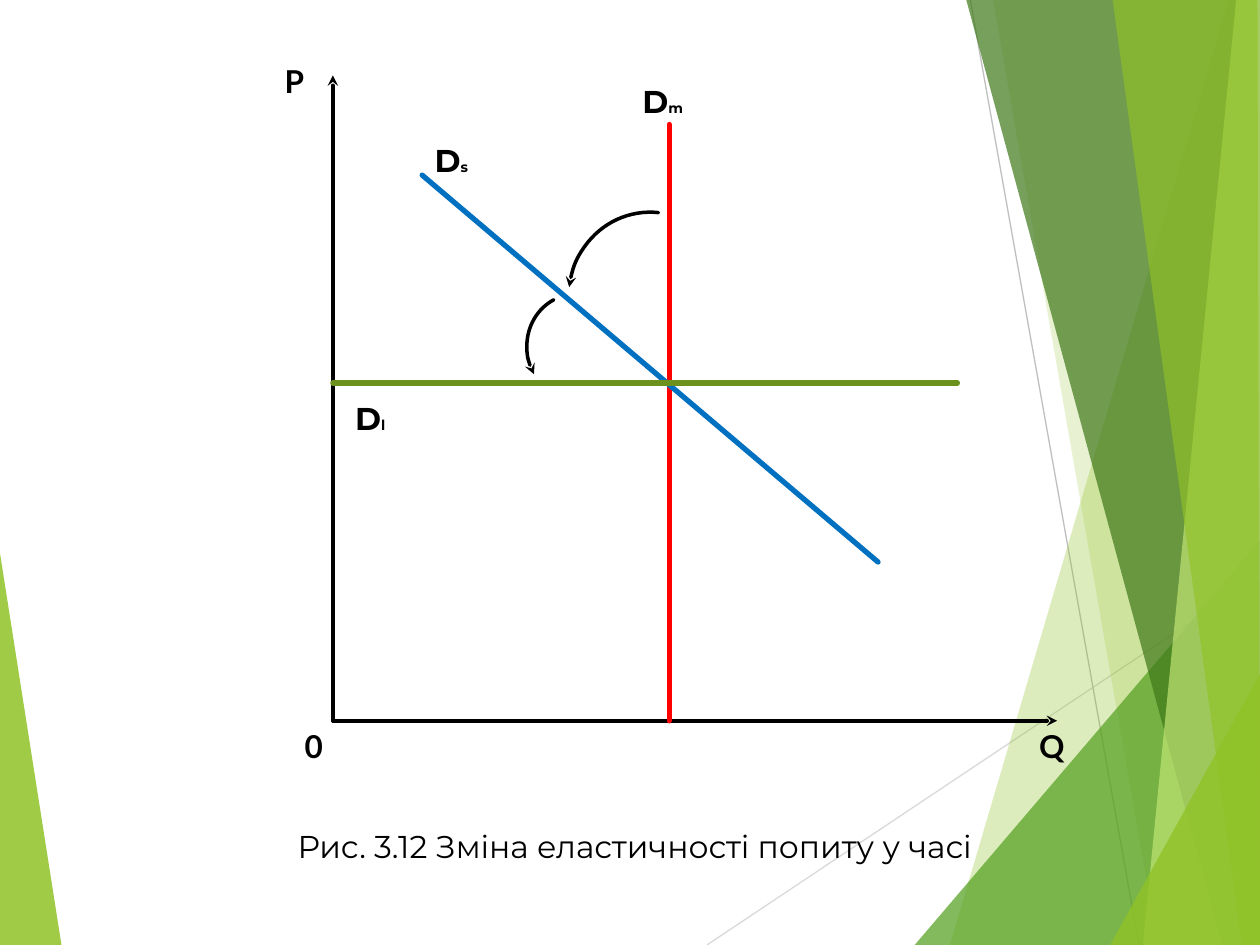
from lxml.etree import SubElement
from pptx import Presentation
from pptx.dml.color import RGBColor
from pptx.enum.shapes import MSO_CONNECTOR, MSO_SHAPE
from pptx.enum.text import PP_ALIGN
from pptx.oxml.ns import qn
from pptx.util import Cm, Pt

W, H = 25.4, 19.05  # slide size, cm
X0, Y0 = 6.71, 14.53  # origin of the graph
XM, YL = 13.49, 7.72  # the vertical and the horizontal demand line

# start, end, colour
HAIRLINES = [
    ((14.25, H), (W, 11.61), "D9D9D9"),
    ((19.56, 0), (22.96, H), "BFBFBF"),
]
# colour, opacity in %, corners
FACETS = [
    ("90C226", 85, [(0, 11.15), (1.24, H), (0, H)]),
    ("90C226", 30, [(24.77, 0), (19.15, H), (W, H), (W, 0)]),
    ("90C226", 20, [(20.02, 0), (23.34, H), (W, H), (W, 0)]),
    ("54A021", 72, [(18.44, H), (W, 10.9), (W, H)]),
    ("3F7819", 70, [(19.48, 0), (24.64, H), (W, H), (W, 0)]),
    ("C0E474", 70, [(24.92, 0), (23.04, H), (W, H), (W, 0)]),
    ("90C226", 65, [(22.43, 0), (25.04, H), (W, H), (25.35, 0)]),
    ("90C226", 80, [(22.38, H), (W, 13.59), (W, H)]),
]
# start, end
AXES = [((X0, Y0), (X0, 1.52)), ((X0, Y0), (21.31, Y0))]
# start, end, colour
CURVES = [
    ((XM, Y0), (XM, 2.51), "FF0000"),
    ((8.51, 3.53), (17.7, 11.33), "0070C0"),
    ((X0, YL), (19.3, YL), "6C921D"),
]
# left, top, width, height, rotation
TURNS = [(11.4, 4.34, 3.38, 3.25, 276.3), (10.57, 5.97, 2.26, 2.13, 241.6)]
# text, small index, font, left, top, width
LABELS = [
    ("P", "", "Lato", 5.49, 1.12, 1),
    ("Q", "", "Lato", 20.7, Y0, 1.2),
    ("0", "", "Lato", 5.89, Y0, 1),
    ("D", "m", "Montserrat", 12.7, 1.52, 1.4),
    ("D", "s", "Montserrat", 8.51, 2.72, 1.2),
    ("D", "l", "Montserrat", 6.91, 7.92, 1.4),
]
CAPTION = "Рис. 3.12 Зміна еластичності попиту у часі"


def rgb(color):
    return RGBColor.from_string(color)


def style_line(s, color, width, arrow=None, cap="rnd"):
    """Set the stroke; arrow is None, "headEnd" or "tailEnd"."""
    s.line.color.rgb = rgb(color)
    s.line.width = Pt(width)
    ln = s.line._get_or_add_ln()
    ln.set("cap", cap)
    if arrow:
        SubElement(ln, qn("a:" + arrow), type="stealth")


def add_line(shapes, start, end, color, width, arrow=None, cap="rnd"):
    s = shapes.add_connector(MSO_CONNECTOR.STRAIGHT, *map(Cm, start + end))
    style_line(s, color, width, arrow, cap)
    SubElement(s._element.spPr, qn("a:effectLst"))


def add_facet(shapes, color, opacity, corners):
    points = [(Cm(x), Cm(y)) for x, y in corners]
    builder = shapes.build_freeform(*points[0])
    builder.add_line_segments(points[1:])
    s = builder.convert_to_shape()
    s.shadow.inherit = False
    s.line.fill.background()
    s.fill.solid()
    s.fill.fore_color.rgb = rgb(color)
    fill = s._element.spPr.find(qn("a:solidFill"))
    SubElement(fill[0], qn("a:alpha"), val=str(opacity * 1000))


def add_turn(shapes, left, top, width, height, rotation):
    s = shapes.add_shape(MSO_SHAPE.ARC, *map(Cm, (left, top, width, height)))
    s.rotation = rotation
    s.shadow.inherit = False
    s.fill.background()
    style_line(s, "000000", 2, "headEnd")


def add_text(shapes, text, font, left, top, width, bold=True):
    tf = shapes.add_textbox(*map(Cm, (left, top, width, 1.02))).text_frame
    tf.word_wrap = True
    p = tf.paragraphs[0]
    p.font.name = font
    p.font.size = Pt(18)
    p.font.bold = bold
    p.font.color.rgb = rgb("000000")
    p.add_run().text = text
    return p


def main():
    prs = Presentation()
    prs.slide_width, prs.slide_height = Cm(W), Cm(H)
    shapes = prs.slides.add_slide(prs.slide_layouts[6]).shapes

    for start, end, color in HAIRLINES:
        add_line(shapes, start, end, color, 0.75, cap="flat")
    for facet in FACETS:
        add_facet(shapes, *facet)
    for start, end in AXES:
        add_line(shapes, start, end, "000000", 2, "tailEnd")
    for start, end, color in CURVES:
        add_line(shapes, start, end, color, 3)
    for turn in TURNS:
        add_turn(shapes, *turn)
    for text, index, *place in LABELS:
        p = add_text(shapes, text, *place)
        if index:
            r = p.add_run()
            r.text = index
            r.font.size = Pt(8)
    p = add_text(shapes, CAPTION, "Montserrat", 1.7, 16.54, 22.2, bold=False)
    p.alignment = PP_ALIGN.CENTER

    prs.save("out.pptx")


if __name__ == "__main__":
    main()
